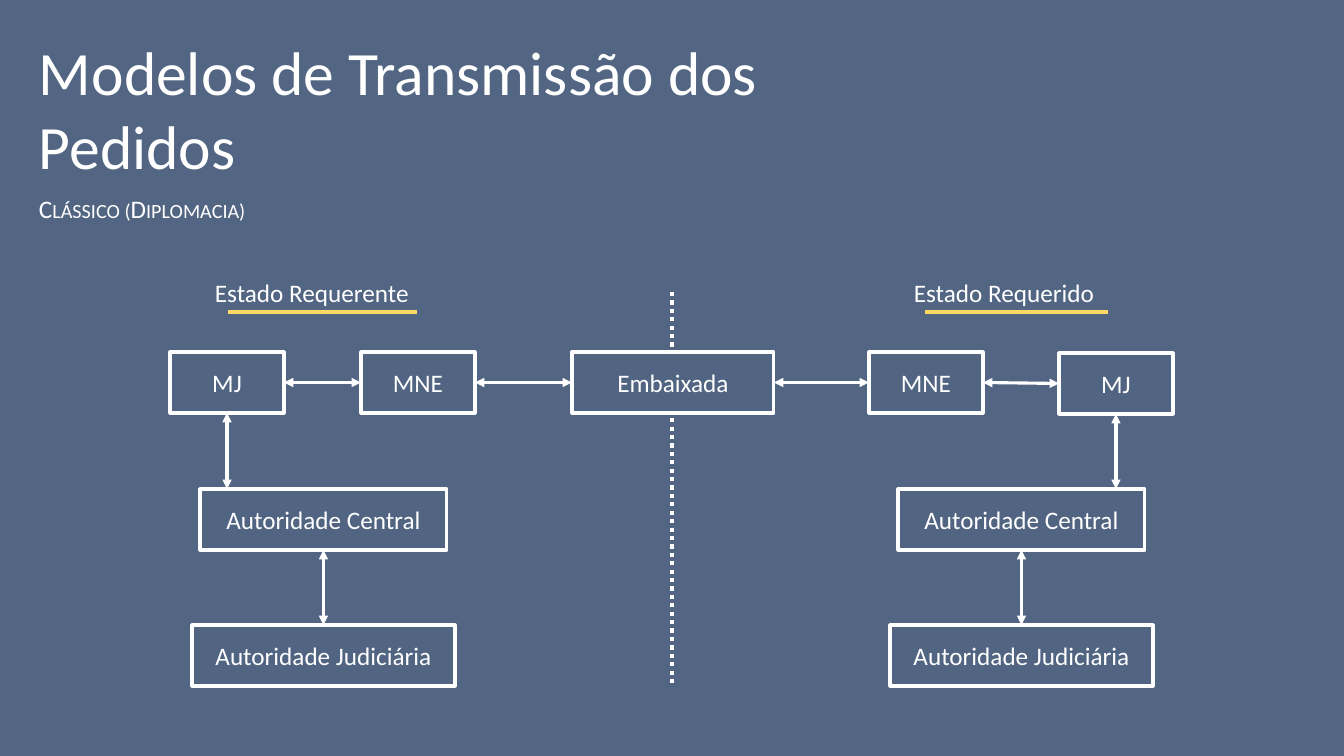
from lxml import etree
from pptx import Presentation, util as u
from pptx.dml.color import RGBColor
from pptx.enum import dml, shapes, text
from pptx.oxml.ns import qn

PX = 9071.43  # EMU in one px: 100.8 px to the inch
BACKGROUND = RGBColor(0x52, 0x65, 0x82)
BOX_FILL = RGBColor(0x51, 0x64, 0x82)
WHITE = RGBColor(0xFF, 0xFF, 0xFF)
YELLOW = RGBColor(0xFF, 0xD9, 0x66)
BOX_HEIGHT = 61
TOP, LEFT, BOTTOM, RIGHT = range(4)  # connection sites of a rectangle

deck = Presentation()
deck.slide_width, deck.slide_height = round(1344 * PX), round(756 * PX)
slide = deck.slides.add_slide(deck.slide_layouts[6])
slide.background.fill.solid()
slide.background.fill.fore_color.rgb = BACKGROUND


def add_text(words, left, top, width, height, size=18, small_caps=False, boxed=False):
    """Add a plain text box, or an outlined rectangle with centred text if boxed."""
    place = [round(length * PX) for length in (left, top, width, height)]
    if boxed:
        box = slide.shapes.add_shape(shapes.MSO_SHAPE.RECTANGLE, *place)
        box.shadow.inherit = False
        box.fill.solid()
        box.fill.fore_color.rgb = BOX_FILL
        box.line.color.rgb = WHITE
        box.line.width = u.Pt(2.25)
    else:
        box = slide.shapes.add_textbox(*place)
    frame = box.text_frame
    frame.word_wrap = True
    para = frame.paragraphs[0]
    if boxed:
        frame.vertical_anchor = text.MSO_ANCHOR.MIDDLE
        para.alignment = text.PP_ALIGN.CENTER
    else:
        frame.auto_size = text.MSO_AUTO_SIZE.SHAPE_TO_FIT_TEXT
    span = para.add_run()
    span.text = words
    span.font.name = "Calibri"
    span.font.size = u.Pt(size)
    span.font.color.rgb = WHITE
    if small_caps:
        span.font._element.set("cap", "small")
    return box


def add_line(x1, y1, x2, y2, color=WHITE, width=2.25, arrows=False):
    ends = [round(length * PX) for length in (x1, y1, x2, y2)]
    line = slide.shapes.add_connector(shapes.MSO_CONNECTOR.STRAIGHT, *ends)
    line.line.color.rgb = color
    line.line.width = u.Pt(width)
    if arrows:
        outline = line.line._get_or_add_ln()
        for end in ("headEnd", "tailEnd"):
            etree.SubElement(outline, qn(f"a:{end}"), type="triangle")
    etree.SubElement(line._element.spPr, qn("a:effectLst"))
    return line


add_text("Modelos de Transmissão dos Pedidos", 29, 29, 744, 159, size=44)
add_text("Clássico (Diplomacia)", 29, 188, 266, 40, small_caps=True)

border = add_line(672, 292, 672, 686, width=3)
border.line.dash_style = dml.MSO_LINE.ROUND_DOT

for state, left, rule_start, rule_end in [
    ("Estado Requerente", 205, 228, 417),
    ("Estado Requerido", 904, 925, 1108),
]:
    add_text(state, left, 272, 235, 40)
    add_line(rule_start, 312, rule_end, 312, color=YELLOW)

# Diplomatic channel, from the requesting state to the requested one
channel = [
    add_text(words, left, top, width, BOX_HEIGHT, boxed=True)
    for words, left, top, width in [
        ("MJ", 170, 352, 114),
        ("MNE", 361, 352, 114),
        ("Embaixada", 572, 352, 202),
        ("MNE", 869, 352, 114),
        ("MJ", 1059, 353, 114),
    ]
]
for sender, receiver in zip(channel, channel[1:]):
    arrow = add_line(0, 0, 0, 0, arrows=True)
    arrow.begin_connect(sender, RIGHT)
    arrow.end_connect(receiver, LEFT)

# Authorities below the ministry of justice of each state
for ministry, ministry_middle, shift in [(channel[0], 227, 0), (channel[-1], 1116, 698)]:
    central = add_text("Autoridade Central", 200 + shift, 489, 247, BOX_HEIGHT, boxed=True)
    judicial = add_text("Autoridade Judiciária", 192 + shift, 625, 263, BOX_HEIGHT, boxed=True)
    arrow = add_line(ministry_middle, 413, ministry_middle, 489, arrows=True)
    arrow.begin_connect(ministry, BOTTOM)
    arrow = add_line(0, 0, 0, 0, arrows=True)
    arrow.begin_connect(central, BOTTOM)
    arrow.end_connect(judicial, TOP)

deck.save("out.pptx")
